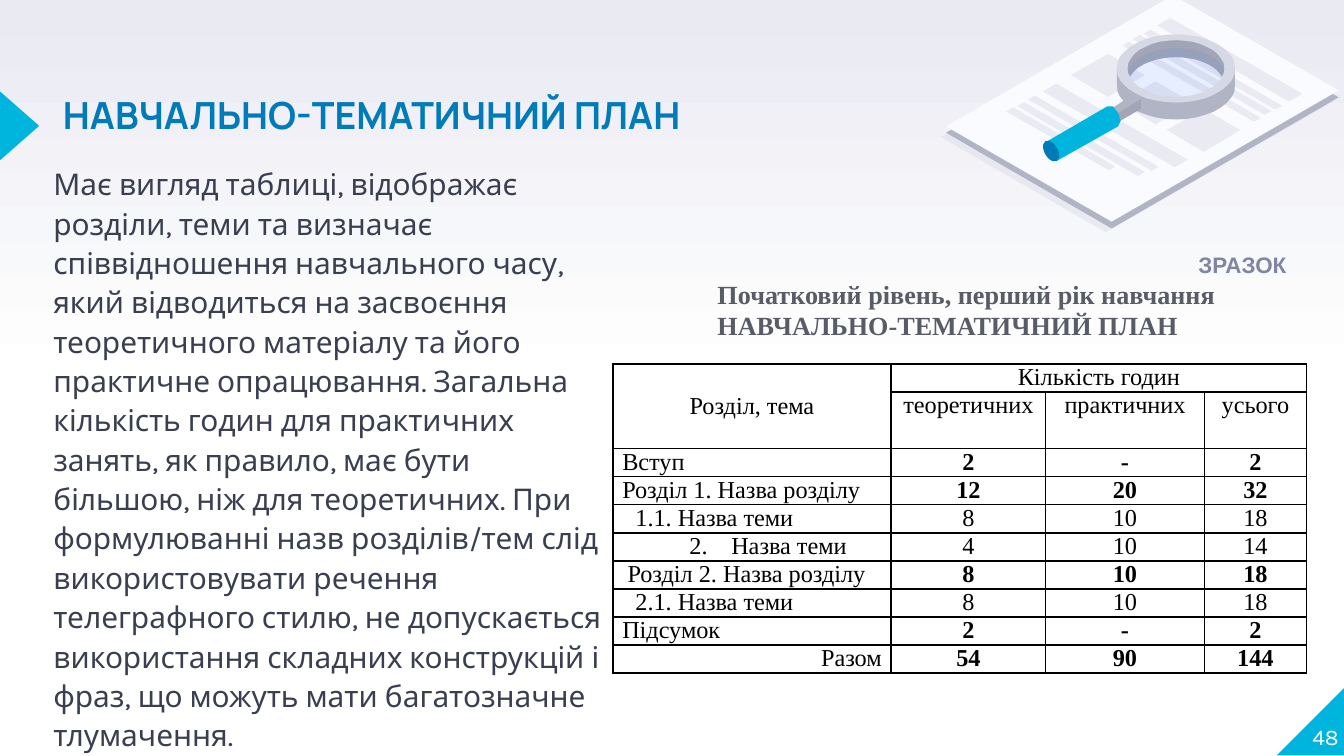
import math
from dataclasses import dataclass
from lxml import etree
from pptx import Presentation
from pptx import util as u
from pptx.dml.color import RGBColor
from pptx.enum import shapes, text
from pptx.oxml.ns import qn

AL = text.PP_ALIGN
KIND = shapes.MSO_SHAPE


@dataclass(frozen=True)
class Theme:
    head: str = "Manrope"
    body: str = "Karla"
    serif: str = "Times New Roman"
    sans: str = "Arial"
    cyan: str = "00B5DD"
    blue: str = "007BB9"
    ink: str = "3A3F50"
    gray: str = "585C67"
    mute: str = "7E86A1"
    black: str = "000000"
    white: str = "FFFFFF"
    mist: str = "E9EAF2"
    paper: str = "FAFBFF"
    light: str = "D6D8E5"
    mid: str = "B1B4C4"
    dark: str = "A1A5B5"
    glass: str = "3E7EFF"
    title: int = 20
    main: int = 16
    sub: int = 14
    cell: int = 13
    small: int = 12


def cm(inch):
    return u.Cm(round(inch * 2.54, 2))


def box(*sides):
    return [cm(v) for v in sides]


def arc(x, y, rx, ry, start=0, end=360):
    """Points along an ellipse, in degrees clockwise from the right."""
    turns = [math.radians(start + (end - start) * i / 36) for i in range(37)]
    return [(x + rx * math.cos(t), y + ry * math.sin(t)) for t in turns]


class Deck:
    def __init__(self, theme):
        self.t = theme
        self.prs = Presentation()
        self.prs.slide_width, self.prs.slide_height = box(10, 5.625)
        self.slide = self.prs.slides.add_slide(self.prs.slide_layouts[5])
        self.pen = self.slide.shapes

    def back(self, low, high):
        fill = self.slide.background.fill
        fill.gradient()
        fill.gradient_angle = 90
        for stop, tone, pos in zip(fill.gradient_stops, (low, high), (0.5, 1)):
            stop.color.rgb = RGBColor.from_string(tone)
            stop.position = pos

    def font(self, para, face, size, tone, bold=False):
        f = para.font
        f.name, f.size, f.bold = face, u.Pt(size), bold
        f.color.rgb = RGBColor.from_string(tone)

    def paint(self, shape, tone, alpha=None):
        shape.shadow.inherit = False
        shape.line.fill.background()
        shape.fill.solid()
        shape.fill.fore_color.rgb = RGBColor.from_string(tone)
        if alpha:
            clr = shape._element.spPr.find(".//" + qn("a:srgbClr"))
            etree.SubElement(clr, qn("a:alpha")).set("val", str(alpha * 1000))

    def shape(self, kind, at, tone, turn=0, alpha=None):
        item = self.pen.add_shape(kind, *box(*at))
        item.rotation = turn
        self.paint(item, tone, alpha)
        return item

    def poly(self, tone, *rings, alpha=None):
        rings = [[box(*p) for p in ring] for ring in rings]
        form = self.pen.build_freeform(*rings[0][0])
        for i, ring in enumerate(rings):
            if i:
                form.move_to(*ring[0])
            form.add_line_segments(ring[1:], close=True)
        self.paint(form.convert_to_shape(), tone, alpha)

    def slab(self, tone, x, y, down, up, alpha=None):
        """Isometric tile from its left corner and its two side widths."""
        k = 0.577
        self.poly(tone, [(x, y), (x + up, y - k * up),
                         (x + up + down, y + k * (down - up)),
                         (x + down, y + k * down)], alpha=alpha)

    def fit(self, item, at, pad):
        item.left, item.top, item.width, item.height = box(*at)
        frame = item.text_frame
        frame.word_wrap = True
        frame.auto_size = text.MSO_AUTO_SIZE.NONE
        frame.vertical_anchor = text.MSO_ANCHOR.TOP
        frame.margin_left = frame.margin_right = cm(pad)
        frame.margin_top = frame.margin_bottom = cm(pad / 2)
        return frame

    def title(self, words, at):
        frame = self.fit(self.slide.shapes.title, at, 0)
        frame.text = words
        para = frame.paragraphs[0]
        para.alignment, para.line_spacing = AL.LEFT, 0.8
        self.font(para, self.t.head, self.t.title, self.t.blue, True)

    def label(self, words, at, face, size, tone, bold=False, pad=0):
        frame = self.fit(self.pen.add_textbox(*box(*at)), at, pad)
        frame.text = words
        for para in frame.paragraphs:
            self.font(para, face, size, tone, bold)
        return frame

    def cell(self, cell, words, align=AL.CENTER, bold=False):
        cell.text = words
        cell.margin_left = cell.margin_right = cm(0.07)
        cell.margin_top = cell.margin_bottom = 0
        para = cell.text_frame.paragraphs[0]
        para.alignment = align
        self.font(para, self.t.serif, self.t.cell, self.t.black, bold)
        props = cell._tc.get_or_add_tcPr()
        for side in ("lnL", "lnR", "lnT", "lnB"):
            line = etree.SubElement(props, qn("a:" + side), w=str(u.Pt(1)))
            fill = etree.SubElement(line, qn("a:solidFill"))
            etree.SubElement(fill, qn("a:srgbClr"), val=self.t.black)
        cell.fill.background()
        return para._p.get_or_add_pPr()

    def table(self, at, cols, rows, data):
        grid = self.pen.add_table(len(rows), len(cols), *box(*at)).table
        grid.first_row = grid.horz_banding = False
        for col, wide in zip(grid.columns, cols):
            col.width = cm(wide)
        for row, high in zip(grid.rows, rows):
            row.height = cm(high)
        # Two-row header
        heads = (("Розділ, тема", "Кількість годин", "", ""),
                 ("", "теоретичних", "практичних", "усього"))
        for r, line in enumerate(heads):
            for c, words in enumerate(line):
                self.cell(grid.cell(r, c), words)
        grid.cell(0, 0).merge(grid.cell(1, 0))
        grid.cell(0, 1).merge(grid.cell(0, 3))
        grid.cell(0, 0).vertical_anchor = text.MSO_ANCHOR.MIDDLE
        # Sections and topics
        for r, (name, align, left, hang, bold, *hours) in enumerate(data, 2):
            props = self.cell(grid.cell(r, 0), name, align)
            props.set("marL", str(cm(left)))
            props.set("indent", str(cm(hang)))
            if hang:
                num = etree.Element(qn("a:buAutoNum"), type="arabicPeriod", startAt="2")
                props.insert(0, num)
            for c, hour in enumerate(hours, 1):
                self.cell(grid.cell(r, c), hour, bold=bold)

    def sheet(self):
        t = self.t
        self.slab(t.light, 7, 1.02, 1.23, 1.69, alpha=40)
        self.slab(t.mid, 7.04, 0.99, 1.23, 1.69)
        self.slab(t.paper, 7.04, 0.94, 1.23, 1.69)
        # Lines of print, then picture tiles
        for x, y, long, wide in ((8.61, 0.19, 0.98, 0.1), (8.51, 0.25, 0.98, 0.05),
                                 (8.43, 0.29, 0.98, 0.05), (8.35, 0.34, 0.98, 0.05),
                                 (7.76, 0.68, 0.98, 0.1), (7.65, 0.74, 0.92, 0.05),
                                 (7.57, 0.79, 0.9, 0.05), (7.49, 0.83, 0.76, 0.05)):
            self.slab(t.mist, x, y, long, wide)
        for i in range(3):
            self.slab(t.mist, 7.97 + 0.355 * i, 0.56 + 0.205 * i, 0.275, 0.275)

    def loupe(self):
        t = self.t
        mid, low, top = 8.75, 0.635, 0.51
        rim, hole = (0.44, 0.255), (0.36, 0.21)
        # Lower rim and inner wall
        self.poly(t.mid, arc(mid, low, *rim), arc(mid, low, *hole))
        self.poly(t.dark, arc(mid, low, *hole, 200, 340) + [
            (9.13, 0.5), (9.12, 0.42), (8.91, 0.29), (8.59, 0.28),
            (8.41, 0.38), (8.36, 0.5)])
        self.poly(t.mid, [(8.31, 0.63), (8.31, 0.5), (8.38, 0.61)])
        self.poly(t.mid, [(9.19, 0.63), (9.19, 0.5), (9.14, 0.57)])
        # Glass, outer wall and upper rim
        self.shape(KIND.OVAL, (8.39, 0.36, 0.73, 0.42), t.glass, alpha=10)
        self.poly(t.mid, arc(mid, 0.6, 0.4, 0.27, 0, 180)
                  + arc(mid, 0.6, 0.4, 0.13, 180, 0))
        self.poly(t.light, arc(mid, top, *rim), arc(mid, top, *hole))
        # Neck and handle
        self.poly(t.mid, [(8.49, 0.74), (8.3, 0.85), (8.25, 0.82), (8.43, 0.71)])
        self.poly(t.dark, [(8.49, 0.81), (8.3, 0.92), (8.3, 0.85), (8.49, 0.74)])
        self.poly(t.cyan, [(8.24, 0.79), (8.28, 0.79), (8.32, 0.84), (8.34, 0.9),
                           (8.32, 0.94), (7.86, 1.2), (7.78, 1.06)])
        self.shape(KIND.OVAL, (7.77, 1.04, 0.1, 0.17), t.blue, 330)


def main():
    t = Theme()
    deck = Deck(t)
    deck.back(t.white, t.mist)

    # Corner and side marks
    corner = deck.shape(KIND.RIGHT_TRIANGLE, (9.5, 5.11, 0.51, 0.51), t.cyan)
    corner._element.spPr.xfrm.set("flipH", "1")
    deck.shape(KIND.ISOSCELES_TRIANGLE, (-0.11, 0.79, 0.51, 0.29), t.cyan, 90)

    # Sheet with magnifying glass
    deck.pen = deck.slide.shapes.add_group_shape().shapes
    deck.sheet()
    deck.loupe()
    deck.pen = deck.slide.shapes

    # Title, body and page number
    deck.title("НАВЧАЛЬНО-ТЕМАТИЧНИЙ ПЛАН", (0.47, 0.75, 6.17, 0.46))
    body = deck.label(
        "Має вигляд таблиці, відображає розділи, теми та визначає співвідношення "
        "навчального часу, який відводиться на засвоєння теоретичного матеріалу та його "
        "практичне опрацювання. Загальна кількість годин для практичних занять, як правило, "
        "має бути більшою, ніж для теоретичних. При формулюванні назв розділів/тем слід "
        "використовувати речення телеграфного стилю, не допускається використання складних "
        "конструкцій і фраз, що можуть мати багатозначне тлумачення.",
        (0.28, 1.21, 4.23, 4.37), t.body, t.main, t.ink).paragraphs[0]
    body.line_spacing, body.space_before = 1.1, u.Pt(6)
    body._p.get_or_add_pPr().set("marL", str(cm(0.12)))
    page = deck.label("48", (9.46, 5.07, 0.5, 0.51), t.body, t.small, t.white)
    page.vertical_anchor = text.MSO_ANCHOR.BOTTOM
    page.paragraphs[0].alignment = AL.RIGHT

    # Sample plan: name, alignment, indent, hang, bold hours, hours
    left = AL.JUSTIFY
    deck.table((4.56, 2.71, 5.16, 2.31), (2.07, 1.15, 1.18, 0.76),
               [0.21, 0.42] + [0.21] * 8, (
        ("Вступ", left, 0, 0, True, "2", "-", "2"),
        ("Розділ 1. Назва розділу", left, 0, 0, True, "12", "20", "32"),
        ("1.1. Назва теми", left, 0.1, 0, False, "8", "10", "18"),
        ("Назва теми", left, 0.81, -0.31, False, "4", "10", "14"),
        ("Розділ 2. Назва розділу", left, 0.04, 0, True, "8", "10", "18"),
        ("2.1. Назва теми", left, 0.1, 0, False, "8", "10", "18"),
        ("Підсумок", left, 0, 0, True, "2", "-", "2"),
        ("Разом", AL.RIGHT, 0, 0, True, "54", "90", "144")))
    deck.label("ЗРАЗОК", (8.82, 1.82, 0.9, 0.3), t.sans, t.small, t.mute, True, 0.1)
    deck.label("Початковий рівень, перший рік навчання\nНАВЧАЛЬНО-ТЕМАТИЧНИЙ ПЛАН",
               (5.24, 2.02, 3.99, 0.57), t.serif, t.sub, t.gray, True, 0.1)
    deck.prs.save("out.pptx")


if __name__ == "__main__":
    main()
